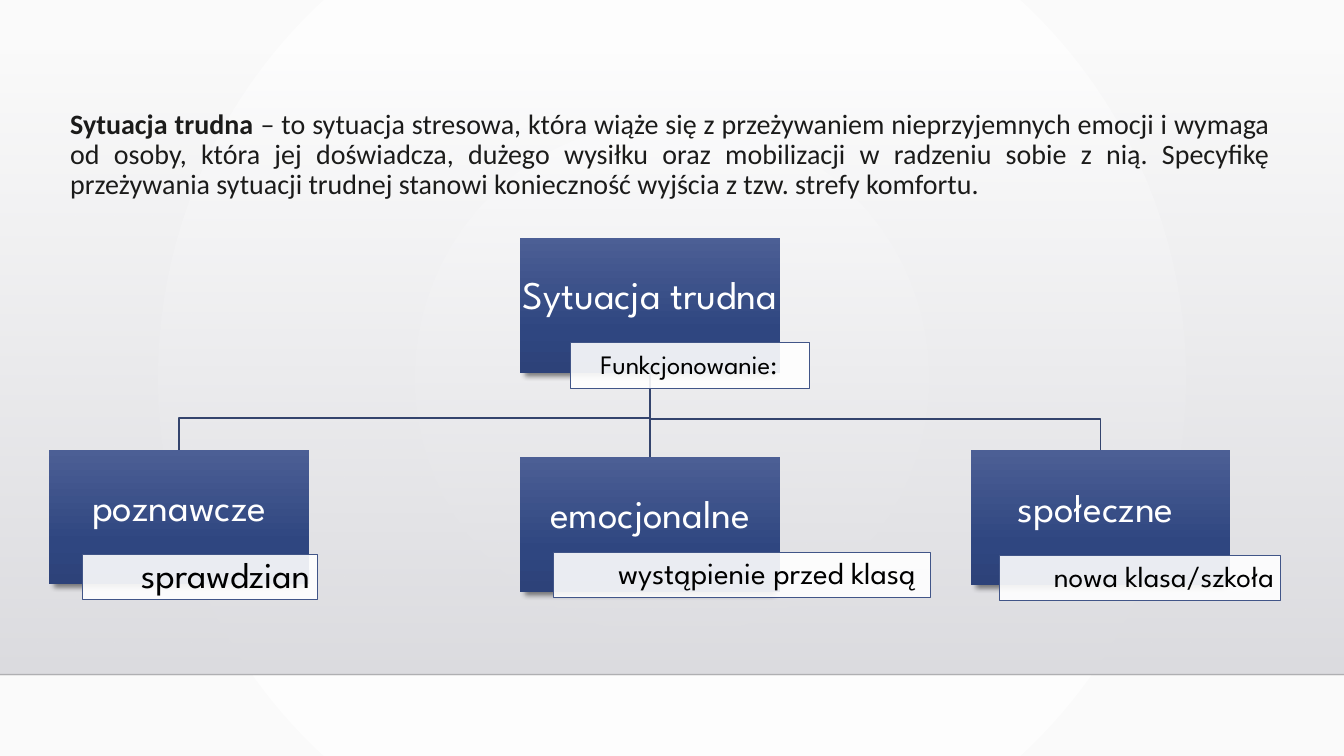
from lxml import etree
from pptx import Presentation
from pptx.dml.color import RGBColor
from pptx.enum.shapes import MSO_CONNECTOR, MSO_SHAPE
from pptx.enum.text import MSO_ANCHOR, PP_ALIGN
from pptx.oxml import parse_xml
from pptx.oxml.ns import nsdecls, qn
from pptx.util import Cm, Pt

RECTANGLE = MSO_SHAPE.RECTANGLE
STRAIGHT = MSO_CONNECTOR.STRAIGHT
TOP, MIDDLE = MSO_ANCHOR.TOP, MSO_ANCHOR.MIDDLE
CENTER, RIGHT, JUSTIFY = PP_ALIGN.CENTER, PP_ALIGN.RIGHT, PP_ALIGN.JUSTIFY

COLORS = {
    "background_center": "FFFFFF", "background_edge": "FAFAFA",
    "panel_top": "DCDCE0", "panel_bottom": "DEDEE2", "floor": "000001",
    "title": "1B1B1A", "branch": "34446D",
    "box_top": "4C5F95", "box_middle": "2F4680", "box_bottom": "2D4279",
    "label_border": "415588", "white": "FFFFFF", "black": "000000",
}
LINEAR_DOWN = '<a:lin ang="5400000" scaled="0"/>'
RADIAL = ('<a:path path="circle"><a:fillToRect l="50000" t="50000" '
          'r="50000" b="50000"/></a:path>')


def paint_gradient(owner, fill, stops, direction):
    """Fill with stops given as (percent, color name, opacity percent)."""
    fill.background()
    empty_fill = owner.element.find(".//" + qn("a:noFill"))
    stop_xml = "".join(
        f'<a:gs pos="{percent * 1000}"><a:srgbClr val="{COLORS[color]}">'
        f'<a:alpha val="{opacity * 1000}"/></a:srgbClr></a:gs>'
        for percent, color, opacity in stops)
    gradient = parse_xml(
        f'<a:gradFill {nsdecls("a")} rotWithShape="1">'
        f'<a:gsLst>{stop_xml}</a:gsLst>{direction}</a:gradFill>')
    empty_fill.getparent().replace(empty_fill, gradient)


def write_text(shape, *texts, size, color, font="League Spartan", align=CENTER,
               anchor=MIDDLE, insets=(0, 0, 0, 0), wrap=False, bold_first=False):
    """Write the texts as runs of one paragraph; insets are left, top, right, bottom in cm."""
    frame = shape.text_frame
    frame.word_wrap = wrap
    frame.vertical_anchor = anchor
    (frame.margin_left, frame.margin_top,
     frame.margin_right, frame.margin_bottom) = map(Cm, insets)
    paragraph = frame.paragraphs[0]
    paragraph.alignment = align
    paragraph.line_spacing = 0.9
    for index, text in enumerate(texts):
        run = paragraph.add_run()
        run.text = text
        run.font.name = font
        run.font.size = Pt(size)
        run.font.bold = bold_first and index == 0
        run.font.color.rgb = RGBColor.from_string(COLORS[color])


presentation = Presentation()
presentation.slide_width, presentation.slide_height = Cm(33.87), Cm(19.05)
slide = presentation.slides.add_slide(presentation.slide_layouts[6])
shapes = slide.shapes

# Background, panel and floor line
paint_gradient(slide, slide.background.fill,
               [(0, "background_center", 100), (100, "background_edge", 100)], RADIAL)
panel = shapes.add_shape(RECTANGLE, 0, Cm(1.3), Cm(33.87), Cm(15.7))
panel.shadow.inherit = False
paint_gradient(panel, panel.fill,
               [(0, "panel_top", 0), (100, "panel_bottom", 100)], LINEAR_DOWN)
panel.line.fill.background()

floor = shapes.add_connector(STRAIGHT, 0, Cm(17), Cm(33.87), Cm(17))
floor.line.width = Pt(1)
floor.line.color.rgb = RGBColor.from_string(COLORS["floor"])
floor_color = floor.element.spPr.find(".//" + qn("a:srgbClr"))
etree.SubElement(floor_color, qn("a:alpha")).set("val", "20000")
etree.SubElement(floor.element.spPr, qn("a:effectLst"))

# Definition
definition = shapes.add_textbox(Cm(1.52), Cm(2.64), Cm(30.73), Cm(2.92))
write_text(
    definition, "Sytuacja trudna ",
    "– to sytuacja stresowa, która wiąże się z przeżywaniem nieprzyjemnych emocji "
    "i wymaga od osoby, która jej doświadcza, dużego wysiłku oraz mobilizacji "
    "w radzeniu sobie z nią. Specyfikę przeżywania sytuacji trudnej stanowi "
    "konieczność wyjścia z tzw. strefy komfortu.",
    size=20, color="title", font="Calibri", align=JUSTIFY, anchor=TOP,
    insets=(0.25, 0.13, 0.25, 0.13), wrap=True, bold_first=True)

# Hierarchy: box text, left, top; label text, left, top, width, size, right inset
BOX_WIDTH, BOX_HEIGHT, LABEL_HEIGHT = 6.55, 3.4, 1.14
BRANCH_DROP = 0.79
nodes = [
    ("Sytuacja trudna", 13.11, 5.99, "Funkcjonowanie:", 14.38, 8.64, 6.02, 19, 0.81),
    ("poznawcze", 1.24, 11.33, "sprawdzian", 2.08, 13.97, 5.92, 26, 0.18),
    ("emocjonalne", 13.11, 11.51, "wystąpienie przed klasą", 13.94, 13.92, 9.5, 22, 0.36),
    ("społeczne ", 24.46, 11.35, "nowa klasa/szkoła", 25.2, 14, 7.06, 21, 0.15),
]
root, *children = nodes
trunk_x = root[1] + BOX_WIDTH / 2
trunk_y = root[2] + BOX_HEIGHT

for child in reversed(children):
    child_x, child_y = child[1] + BOX_WIDTH / 2, child[2]
    bend_y = child_y - BRANCH_DROP
    builder = shapes.build_freeform(Cm(trunk_x), Cm(trunk_y))
    builder.add_line_segments(
        [(Cm(x), Cm(y)) for x, y in
         [(trunk_x, bend_y), (child_x, bend_y), (child_x, child_y)]], close=False)
    branch = builder.convert_to_shape()
    branch.shadow.inherit = False
    branch.fill.background()
    branch.line.width = Pt(1.25)
    branch.line.color.rgb = RGBColor.from_string(COLORS["branch"])

for (name, left, top, label_text, label_left, label_top,
     label_width, label_size, right_inset) in nodes:
    box = shapes.add_shape(RECTANGLE, Cm(left), Cm(top), Cm(BOX_WIDTH), Cm(BOX_HEIGHT))
    box.shadow.inherit = False
    paint_gradient(box, box.fill, [(0, "box_top", 100), (69, "box_middle", 100),
                                   (100, "box_bottom", 100)], LINEAR_DOWN)
    box.line.fill.background()
    box.element.spPr.find(qn("a:effectLst")).append(parse_xml(
        f'<a:outerShdw {nsdecls("a")} blurRad="50800" dist="50800" dir="5400000" '
        f'sx="96000" sy="96000" algn="ctr" rotWithShape="0">'
        f'<a:srgbClr val="{COLORS["black"]}"><a:alpha val="48000"/></a:srgbClr>'
        f'</a:outerShdw>'))
    write_text(box, name, size=28, color="white", insets=(0.05, 0.05, 0.05, 0.48))

    label = shapes.add_shape(RECTANGLE, Cm(label_left), Cm(label_top),
                             Cm(label_width), Cm(LABEL_HEIGHT))
    label.shadow.inherit = False
    label.fill.solid()
    label.fill.fore_color.rgb = RGBColor.from_string(COLORS["white"])
    label_color = label.element.spPr.find(".//" + qn("a:srgbClr"))
    etree.SubElement(label_color, qn("a:alpha")).set("val", "90000")
    label.line.width = Pt(0.75)
    label.line.color.rgb = RGBColor.from_string(COLORS["label_border"])
    write_text(label, label_text, size=label_size, color="black", align=RIGHT,
               insets=(0.15, 0.04, right_inset, 0.04), wrap=True)

presentation.save("out.pptx")
